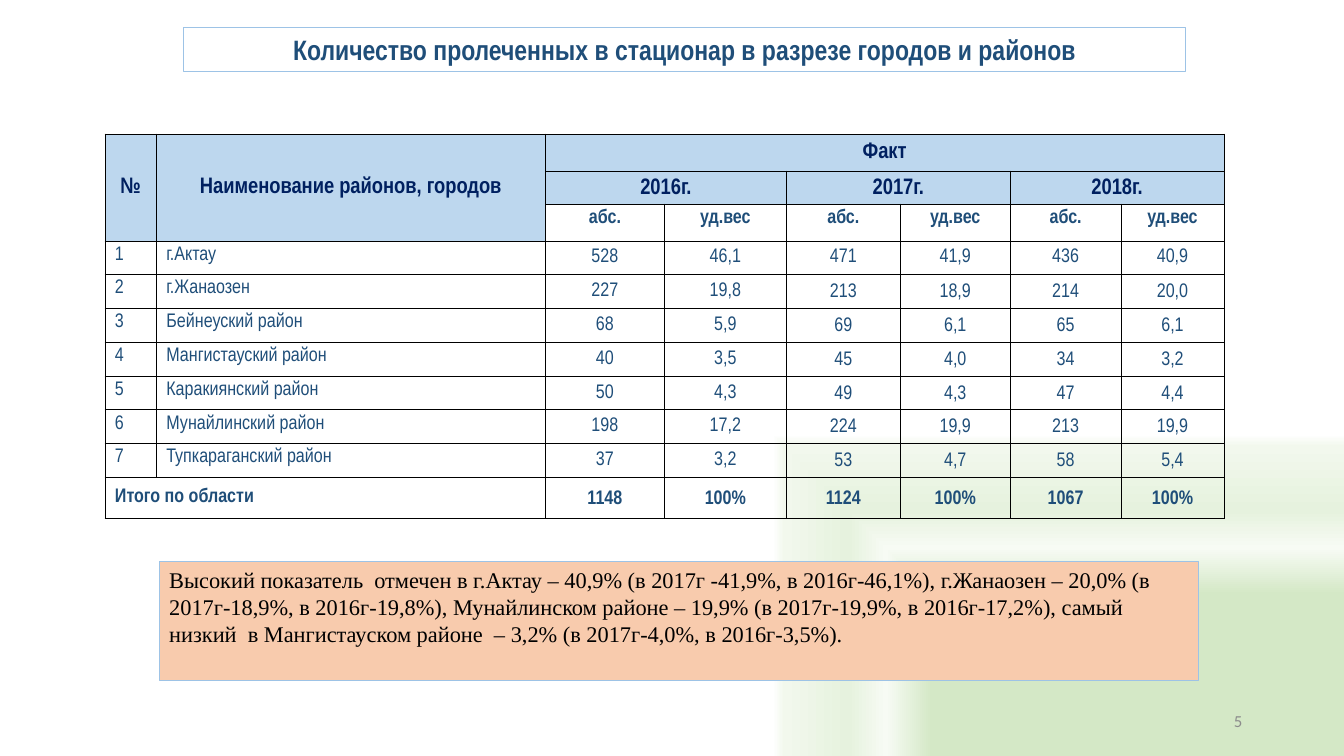
from pptx import Presentation, oxml, util as u
from pptx.dml.color import RGBColor
from pptx.enum import shapes, text
from pptx.oxml import ns

COLORS = {"navy": "002060", "blue": "1F4E79", "header": "BDD7EE", "note": "F8CBAD",
          "outline": "9DC3E6", "border": "000000", "black": "000000", "number": "8C8C8C"}
BACKGROUND = [(43, "D4E8C6"), (55, "F7FBF4"), (65, "E6F2DE"), (82, "F2F8ED"), (85, "FFFFFF")]
LEFT, CENTER, RIGHT = text.PP_ALIGN.LEFT, text.PP_ALIGN.CENTER, text.PP_ALIGN.RIGHT
TOP, MIDDLE = text.MSO_ANCHOR.TOP, text.MSO_ANCHOR.MIDDLE


def write(frame, words, size=14, font="Arial Narrow", color="blue", bold=False,
          align=LEFT, spacing=None, after=None):
    frame.word_wrap = True
    para = frame.paragraphs[0]
    para.alignment = align
    if spacing:
        para.line_spacing = spacing
    if after:
        para.space_after = u.Pt(after)
    span = para.add_run()
    span.text = words
    span.font.size = u.Pt(size)
    span.font.name = font
    span.font.bold = bold
    span.font.color.rgb = RGBColor.from_string(COLORS[color])


deck = Presentation()
deck.slide_width, deck.slide_height = u.Inches(13.33), u.Inches(7.5)
page = deck.slides.add_slide(deck.slide_layouts[6])

page.background.fill.solid()
solid = page.element.find(".//" + ns.qn("p:bgPr") + "/" + ns.qn("a:solidFill"))
stops = "".join(f'<a:gs pos="{place * 1000}"><a:srgbClr val="{color}"/></a:gs>'
                for place, color in BACKGROUND)
gradient = oxml.parse_xml(
    f'<a:gradFill {ns.nsdecls("a")} rotWithShape="1"><a:gsLst>{stops}</a:gsLst>'
    '<a:path path="rect"><a:fillToRect l="100000" t="100000"/></a:path>'
    '<a:tileRect r="-100000" b="-100000"/></a:gradFill>')
solid.getparent().replace(solid, gradient)

number = page.shapes.add_textbox(u.Inches(9.42), u.Inches(6.95), u.Inches(3), u.Inches(0.4))
number.text_frame.vertical_anchor = MIDDLE
write(number.text_frame, "5", size=12, font="Calibri", color="number", align=RIGHT)

widths = [0.51, 3.86, 1.18, 1.21, 1.13, 1.09, 1.1, 1.02]
heights = [0.36, 0.3, 0.33, 0.33, 0.33, 0.34, 0.33, 0.33, 0.33, 0.33, 0.41]
rows = [
    ["№", "Наименование районов, городов", "Факт", "", "", "", "", ""],
    ["", "", "2016г.", "", "2017г.", "", "2018г.", ""],
    ["", ""] + ["абс.", "уд.вес"] * 3,
    ["1", "г.Актау", "528", "46,1", "471", "41,9", "436", "40,9"],
    ["2", "г.Жанаозен", "227", "19,8", "213", "18,9", "214", "20,0"],
    ["3", "Бейнеуский район", "68", "5,9", "69", "6,1", "65", "6,1"],
    ["4", "Мангистауский район", "40", "3,5", "45", "4,0", "34", "3,2"],
    ["5", "Каракиянский район", "50", "4,3", "49", "4,3", "47", "4,4"],
    ["6", "Мунайлинский район", "198", "17,2", "224", "19,9", "213", "19,9"],
    ["7", "Тупкараганский район", "37", "3,2", "53", "4,7", "58", "5,4"],
    ["Итого по области", "", "1148", "100%", "1124", "100%", "1067", "100%"],
]
FIRST, TOTAL = 3, len(rows) - 1
table = page.shapes.add_table(len(rows), len(widths), u.Inches(1.04), u.Inches(1.33),
                              u.Inches(sum(widths)), u.Inches(sum(heights))).table
table.first_row = table.horz_banding = False
for column, width in zip(table.columns, widths):
    column.width = u.Inches(width)
for line, height in zip(table.rows, heights):
    line.height = u.Inches(height)

merges = [(0, 0, 2, 0), (0, 1, 2, 1), (0, 2, 0, 7), (TOTAL, 0, TOTAL, 1)]
merges += [(1, left, 1, left + 1) for left in (2, 4, 6)]
for top, left, bottom, right in merges:
    table.cell(top, left).merge(table.cell(bottom, right))

for r, values in enumerate(rows):
    for c, words in enumerate(values):
        cell = table.cell(r, c)
        props = cell._tc.get_or_add_tcPr()
        for side in "LRTB":
            props.append(oxml.parse_xml(
                f'<a:ln{side} {ns.nsdecls("a")} w="6350"><a:solidFill>'
                f'<a:srgbClr val="{COLORS["border"]}"/></a:solidFill></a:ln{side}>'))
        heading = r < 2 or (r == 2 and c < 2)
        if heading:
            cell.fill.solid()
            cell.fill.fore_color.rgb = RGBColor.from_string(COLORS["header"])
        else:
            cell.fill.background()
        if not words:
            continue

        style = {"bold": r < FIRST or r == TOTAL,
                 "align": CENTER if r < FIRST or c > 1 else LEFT}
        first_tight = {FIRST: 5, TOTAL: 2}.get(r, 4)
        if heading:
            style.update(size=16, color="navy")
        if r == 1:
            style.update(spacing=1.15, after=1)
            cell.margin_left = cell.margin_right = u.Inches(0.01)
            cell.margin_top = cell.margin_bottom = u.Inches(0.01)
        elif r >= FIRST and c >= first_tight:
            cell.margin_left = cell.margin_right = u.Inches(0.07)
            cell.margin_top = cell.margin_bottom = 0
            if r > FIRST:
                style["spacing"] = u.Pt(15)
        centered = heading or r == TOTAL or (r >= FIRST and c > 1)
        cell.vertical_anchor = MIDDLE if centered else TOP
        write(cell.text_frame, words, **style)

title = "Количество пролеченных в стационар в разрезе городов и районов"
note = ("Высокий показатель  отмечен в г.Актау – 40,9% (в 2017г -41,9%, в 2016г-46,1%), "
        "г.Жанаозен – 20,0% (в 2017г-18,9%, в 2016г-19,8%), Мунайлинском районе – 19,9% "
        "(в 2017г-19,9%, в 2016г-17,2%), самый низкий  в Мангистауском районе  – 3,2% "
        "(в 2017г-4,0%, в 2016г-3,5%).")
boxes = [
    (title, (1.82, 0.27, 9.94, 0.44), None, {"size": 20, "bold": True, "align": CENTER}),
    (note, (1.58, 5.57, 10.31, 1.18), "note",
     {"size": 16, "font": "Times New Roman", "color": "black"}),
]
for words, place, fill, style in boxes:
    box = page.shapes.add_shape(shapes.MSO_SHAPE.RECTANGLE, *map(u.Inches, place))
    box.shadow.inherit = False
    if fill:
        box.fill.solid()
        box.fill.fore_color.rgb = RGBColor.from_string(COLORS[fill])
    else:
        box.fill.background()
    box.line.color.rgb = RGBColor.from_string(COLORS["outline"])
    box.line.width = u.Pt(0.75)
    box.text_frame.vertical_anchor = TOP
    write(box.text_frame, words, **style)

deck.save("out.pptx")
